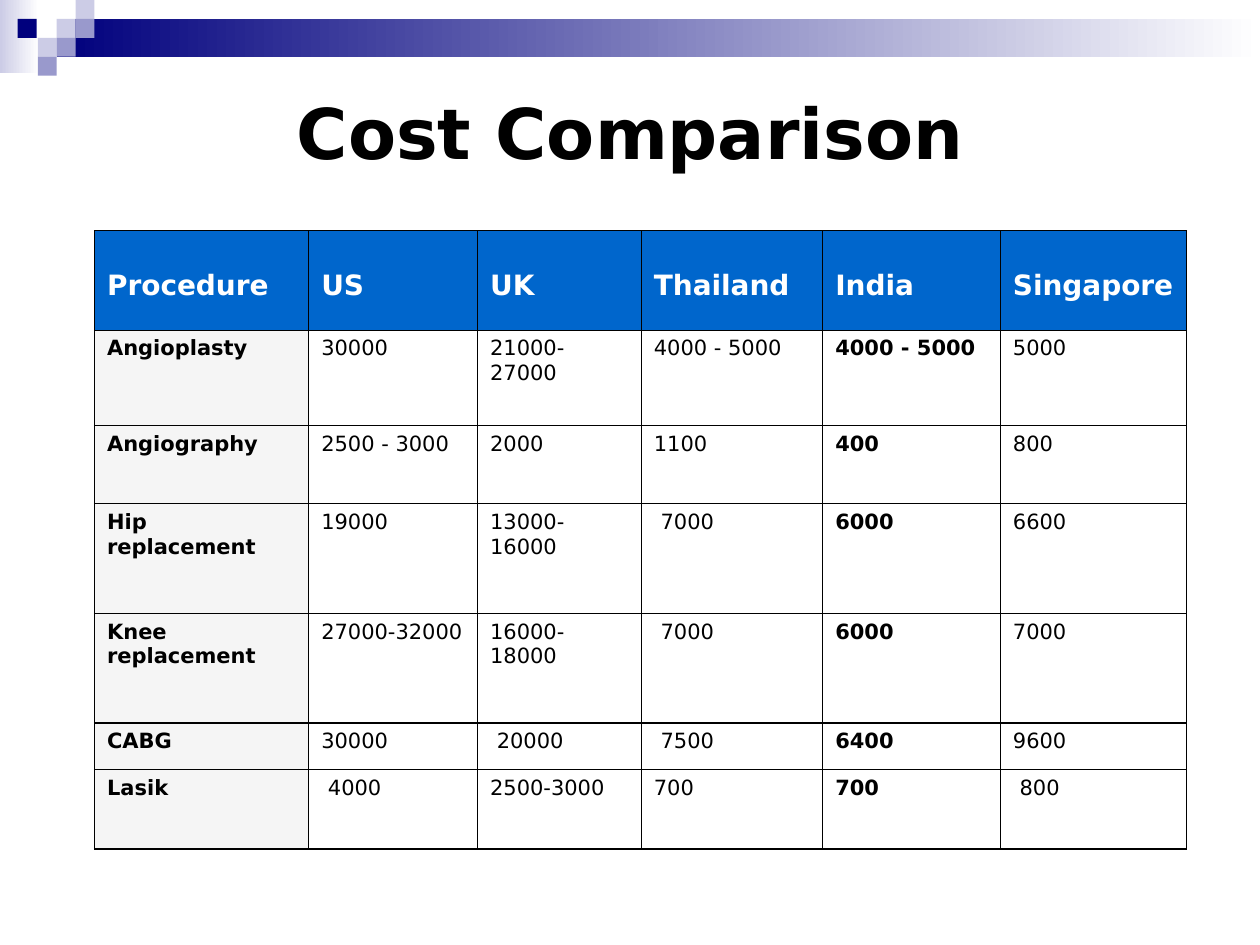
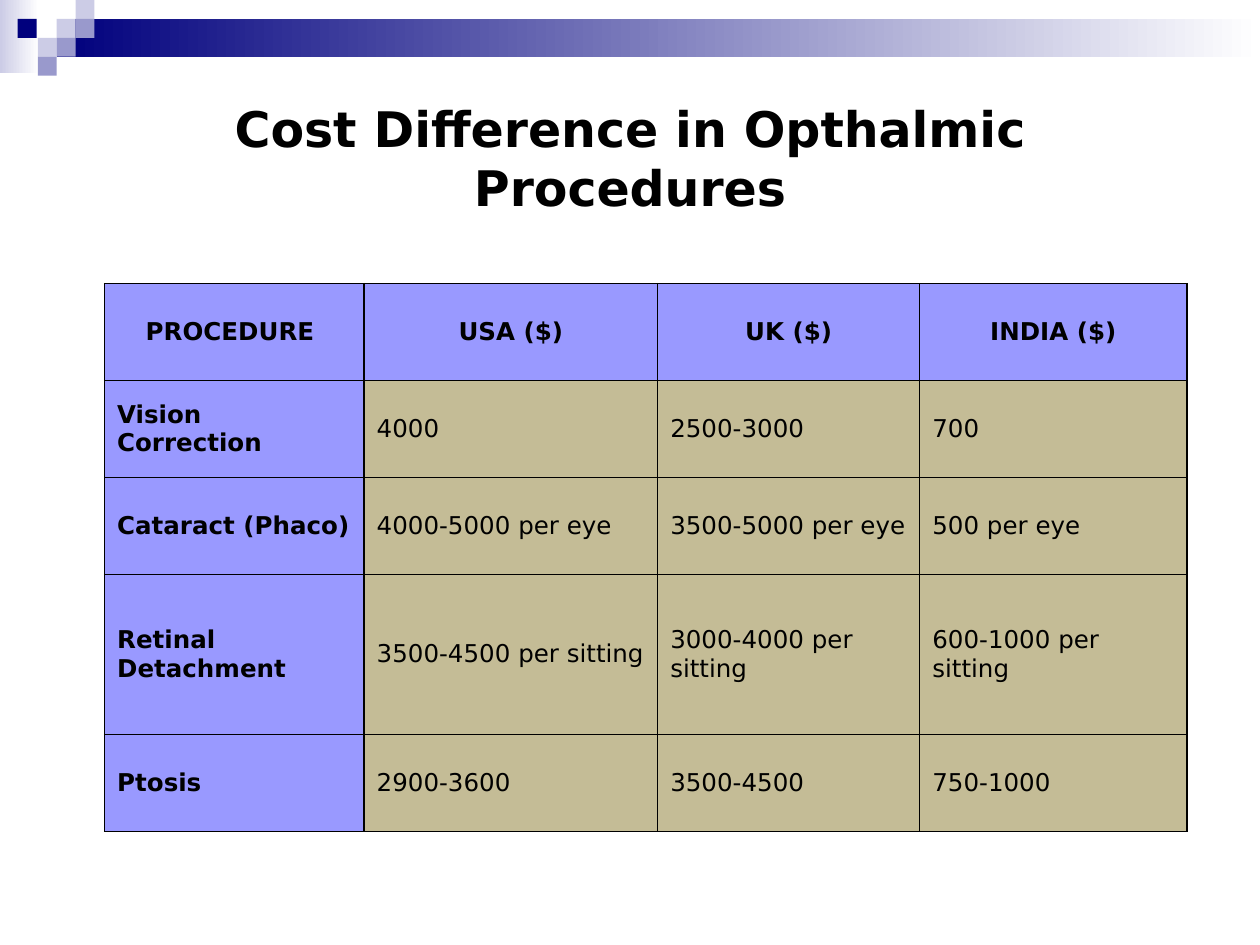
from dataclasses import dataclass

from lxml import etree
from pptx import Presentation
from pptx.dml.color import RGBColor
from pptx.enum.shapes import MSO_SHAPE
from pptx.enum.text import MSO_ANCHOR, PP_ALIGN
from pptx.oxml.ns import qn
from pptx.util import Inches, Pt

RECT = MSO_SHAPE.RECTANGLE
TOP, MIDDLE = MSO_ANCHOR.TOP, MSO_ANCHOR.MIDDLE
LEFT, CENTER, JUSTIFY = PP_ALIGN.LEFT, PP_ALIGN.CENTER, PP_ALIGN.JUSTIFY

FONT = "DejaVu Sans"
BLACK = RGBColor(0x00, 0x00, 0x00)
WHITE = RGBColor(0xFF, 0xFF, 0xFF)
NAVY = RGBColor(0x00, 0x00, 0x7D)
LAVENDER = RGBColor(0xCC, 0xCC, 0xE6)
PERIWINKLE = RGBColor(0x99, 0x99, 0xCC)
BLUE = RGBColor(0x00, 0x66, 0xCC)
PALE_GREY = RGBColor(0xF5, 0xF5, 0xF5)
VIOLET = RGBColor(0x99, 0x99, 0xFF)
KHAKI = RGBColor(0xC4, 0xBC, 0x96)

SQUARE = 0.15
MOSAIC = [  # left, top, colour
    (0.45, 0.15, LAVENDER),
    (0.6, 0, LAVENDER),
    (0.6, 0.15, PERIWINKLE),
    (0.3, 0.3, LAVENDER),
    (0.14, 0.15, NAVY),
    (0.45, 0.3, PERIWINKLE),
    (0.3, 0.45, PERIWINKLE),
]

SURGERY_COSTS = [
    ["Procedure", "US", "UK", "Thailand", "India", "Singapore"],
    ["Angioplasty", "30000", "21000-27000", "4000 - 5000", "4000 - 5000", "5000"],
    ["Angiography", "2500 - 3000", "2000", "1100", "400", "800"],
    ["Hip replacement", "19000", "13000-16000", " 7000", "6000", "6600"],
    ["Knee replacement", "27000-32000", "16000-18000", " 7000", "6000", "7000"],
    ["CABG", "30000", " 20000", " 7500", "6400", "9600"],
    ["Lasik", " 4000", "2500-3000", "700", "700", " 800"],
]

EYE_COSTS = [
    ["PROCEDURE ", "USA ($)", "UK ($)", "INDIA ($)"],
    ["Vision Correction", "4000", "2500-3000", "700"],
    ["Cataract (Phaco)", "4000-5000 per eye", "3500-5000 per eye", "500 per eye"],
    ["Retinal Detachment", "3500-4500 per sitting", "3000-4000 per sitting",
     "600-1000 per sitting"],
    ["Ptosis", "2900-3600", "3500-4500", "750-1000"],
]


@dataclass
class TableStyle:
    header_fill: RGBColor
    label_fill: RGBColor
    header_color: RGBColor
    header_size: int
    body_size: int
    border: float
    body_fill: RGBColor = None
    bold_columns: tuple = (0,)
    anchor: MSO_ANCHOR = TOP
    header_align: PP_ALIGN = LEFT
    label_align: PP_ALIGN = LEFT
    header_top: float = 0.05


SURGERY_STYLE = TableStyle(BLUE, PALE_GREY, WHITE, 16, 12, 0.75,
                           bold_columns=(0, 4), header_top=0.31)
EYE_STYLE = TableStyle(VIOLET, VIOLET, BLACK, 14, 14, 1, body_fill=KHAKI,
                       anchor=MIDDLE, header_align=CENTER, label_align=JUSTIFY)


def add_rect(slide, left, top, width, height, color, fade_to=None):
    """Borderless rectangle, fading left to right when fade_to is given."""
    sp = slide.shapes.add_shape(RECT, Inches(left), Inches(top),
                                Inches(width), Inches(height))
    sp.shadow.inherit = False
    sp.line.fill.background()
    if fade_to is None:
        sp.fill.solid()
        sp.fill.fore_color.rgb = color
        return
    sp.fill.gradient()
    sp.fill.gradient_angle = 0
    for stop, position, rgb in zip(sp.fill.gradient_stops, (0, 1), (color, fade_to)):
        stop.position = position
        stop.color.rgb = rgb


def add_banner(slide):
    add_rect(slide, 0, 0, 0.31, 0.58, LAVENDER, fade_to=WHITE)
    add_rect(slide, 0.45, 0.15, 9.55, 0.3, NAVY, fade_to=WHITE)
    for left, top, color in MOSAIC:
        add_rect(slide, left, top, SQUARE, SQUARE, color)


def set_font(p, size, color, bold):
    p.font.name = FONT
    p.font.size = Pt(size)
    p.font.color.rgb = color
    p.font.bold = bold


def add_title(slide, text, top, height, size):
    tf = slide.shapes.add_textbox(Inches(0.5), Inches(top),
                                  Inches(9), Inches(height)).text_frame
    tf.word_wrap = True
    tf.vertical_anchor = MIDDLE
    p = tf.paragraphs[0]
    p.text = text
    p.alignment = CENTER
    set_font(p, size, BLACK, True)


def set_borders(cell, width):
    tc_pr = cell._tc.get_or_add_tcPr()
    for side in ("a:lnL", "a:lnR", "a:lnT", "a:lnB"):
        ln = etree.SubElement(tc_pr, qn(side), w=str(Pt(width)))
        fill = etree.SubElement(ln, qn("a:solidFill"))
        etree.SubElement(fill, qn("a:srgbClr"), val=str(BLACK))


def fill_cell(cell, text, row, col, style):
    header = row == 0
    set_borders(cell, style.border)
    if header:
        fill, align = style.header_fill, style.header_align
        cell.margin_top = Inches(style.header_top)
    elif col == 0:
        fill, align = style.label_fill, style.label_align
    else:
        fill, align = style.body_fill, LEFT
    if fill is None:
        cell.fill.background()
    else:
        cell.fill.solid()
        cell.fill.fore_color.rgb = fill
    cell.vertical_anchor = style.anchor
    p = cell.text_frame.paragraphs[0]
    p.text = text
    p.alignment = align
    set_font(p, style.header_size if header else style.body_size,
             style.header_color if header else BLACK,
             header or col in style.bold_columns)


def add_cost_table(slide, rows, left, top, widths, heights, style):
    table = slide.shapes.add_table(
        len(rows), len(widths), Inches(left), Inches(top),
        Inches(sum(widths)), Inches(sum(heights))).table
    table.first_row = table.horz_banding = False
    for column, width in zip(table.columns, widths):
        column.width = Inches(width)
    for r, (values, height) in enumerate(zip(rows, heights)):
        table.rows[r].height = Inches(height)
        for c, text in enumerate(values):
            fill_cell(table.cell(r, c), text, r, c, style)


def add_slide(prs):
    slide = prs.slides.add_slide(prs.slide_layouts[6])
    add_banner(slide)
    return slide


def main():
    prs = Presentation()
    prs.slide_width, prs.slide_height = Inches(10), Inches(7.5)

    slide = add_slide(prs)
    add_title(slide, "Cost Comparison", 0.42, 1.25, 40)
    add_cost_table(slide, SURGERY_COSTS, 0.75, 1.83,
                   [1.7, 1.34, 1.3, 1.44, 1.41, 1.48],
                   [0.79, 0.76, 0.62, 0.87, 0.87, 0.37, 0.63], SURGERY_STYLE)

    slide = add_slide(prs)
    add_title(slide, "Cost Difference in Opthalmic Procedures", 0.5, 1.5, 28)
    add_cost_table(slide, EYE_COSTS, 0.83, 2.25, [2.06, 2.33, 2.08, 2.12],
                   [0.77, 0.77, 0.77, 1.27, 0.77], EYE_STYLE)

    prs.save("out.pptx")


if __name__ == "__main__":
    main()
